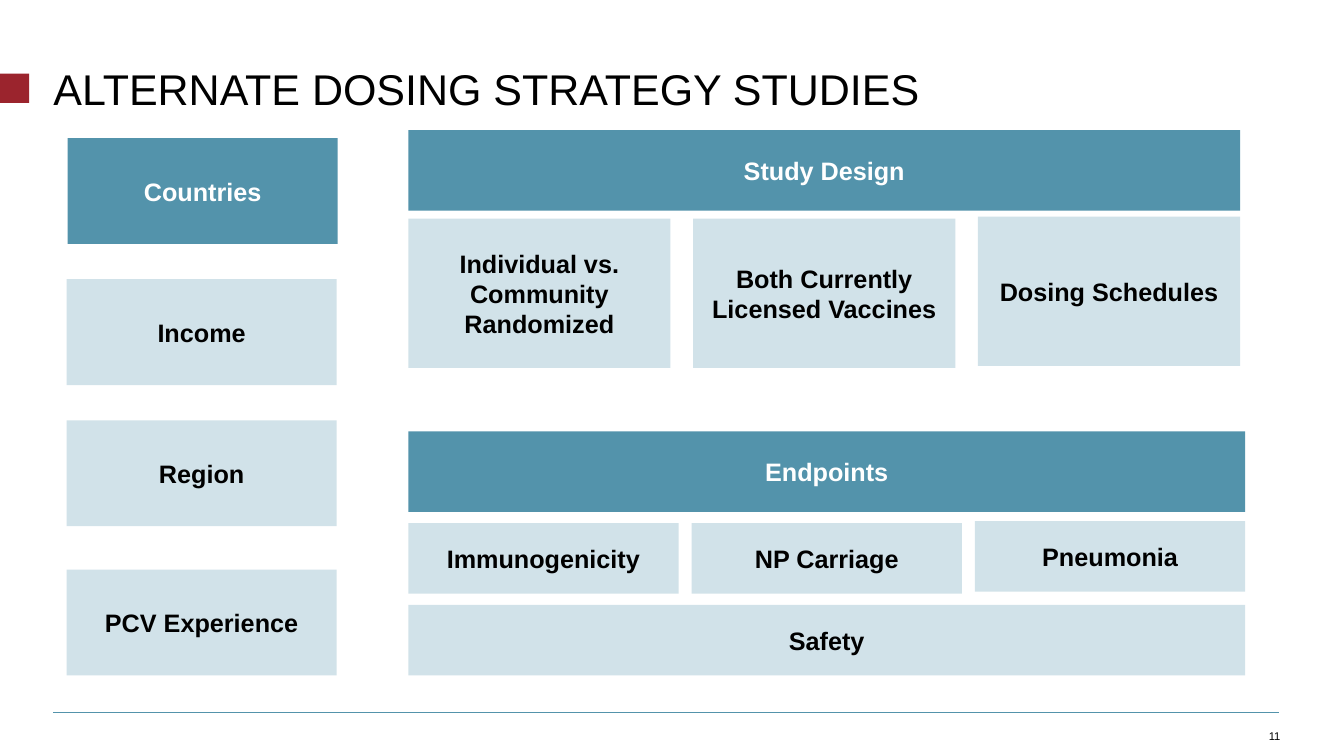
from dataclasses import dataclass

from lxml.etree import SubElement
from pptx import Presentation
from pptx.dml.color import RGBColor
from pptx.enum.shapes import MSO_CONNECTOR, MSO_SHAPE
from pptx.enum.text import MSO_ANCHOR, MSO_AUTO_SIZE, PP_ALIGN
from pptx.oxml.ns import qn
from pptx.util import Inches, Pt


@dataclass(frozen=True)
class Theme:
    """Colours, font and type sizes of the slide."""
    accent: RGBColor = RGBColor(0x9B, 0x24, 0x2D)
    header: RGBColor = RGBColor(0x53, 0x93, 0xAB)
    item: RGBColor = RGBColor(0xD1, 0xE2, 0xE9)
    dark: RGBColor = RGBColor(0, 0, 0)
    light: RGBColor = RGBColor(0xFF, 0xFF, 0xFF)
    font: str = "Arial"
    title: float = 30.7
    body: float = 18
    small: float = 8


THEME = Theme()


def apply(target, formats):
    """Set every attribute named in formats on target."""
    for name, value in formats.items():
        setattr(target, name, value)


def place(shape, x, y, w, h):
    """Move and size a shape in inches."""
    apply(shape, {"left": Inches(x), "top": Inches(y),
                  "width": Inches(w), "height": Inches(h)})


def write(shape, text, size, color, align, anchor, bold=False, inset=None):
    """Put one formatted paragraph in a shape and return it."""
    tf = shape.text_frame
    apply(tf, {"word_wrap": True, "auto_size": MSO_AUTO_SIZE.NONE,
               "vertical_anchor": anchor})
    if inset is not None:
        sides = ("left", "right", "top", "bottom")
        apply(tf, {f"margin_{side}": Inches(inset) for side in sides})
    p = tf.paragraphs[0]
    p.alignment = align
    r = p.add_run()
    r.text = text
    apply(r.font, {"name": THEME.font, "size": Pt(size), "bold": bold})
    r.font.color.rgb = color
    return p


def add_block(s, x, y, w, h, fill):
    """Add a flat rectangle without outline."""
    sp = s.shapes.add_shape(MSO_SHAPE.RECTANGLE, Inches(x), Inches(y),
                            Inches(w), Inches(h))
    sp.shadow.inherit = False
    sp.fill.solid()
    sp.fill.fore_color.rgb = fill
    sp.line.fill.background()
    return sp


def add_label(s, x, y, w, h, text, header=False):
    """Add a header or item block with a centred bold label."""
    fill, color = (THEME.header, THEME.light) if header else (THEME.item, THEME.dark)
    write(add_block(s, x, y, w, h, fill), text, THEME.body, color,
          PP_ALIGN.CENTER, MSO_ANCHOR.MIDDLE, bold=True)


def add_row(s, x, y, w, h, item_w, labels, last_lift=0.02):
    """Spread items evenly over a row, the last one slightly raised."""
    step = (w - item_w) / (len(labels) - 1)
    for i, label in enumerate(labels):
        lift = last_lift if i == len(labels) - 1 else 0
        add_label(s, x + i * step, y - lift, item_w, h, label)


def add_title(s, x, y, w, h, text):
    """Fill the title placeholder and set the red marker at the slide edge."""
    add_block(s, 0, y + 0.02, 0.29, 0.29, THEME.accent)
    place(s.shapes.title, x, y, w, h)
    p = write(s.shapes.title, text, THEME.title, THEME.dark,
              PP_ALIGN.LEFT, MSO_ANCHOR.TOP, inset=0)
    p.line_spacing = Pt(THEME.title)


def add_footer(s, x, y, w, h, number):
    """Draw the footer rule with the page number below its right end."""
    rule = s.shapes.add_connector(MSO_CONNECTOR.STRAIGHT, Inches(x), Inches(y),
                                  Inches(x + w), Inches(y))
    rule.line.color.rgb = THEME.header
    rule.line.width = Pt(0.5)
    SubElement(rule._element.spPr, qn("a:effectLst"))
    tb = s.shapes.add_textbox(Inches(x + w - 0.27), Inches(y + 0.07),
                              Inches(0.28), Inches(h - 0.07))
    write(tb, number, THEME.small, THEME.dark,
          PP_ALIGN.RIGHT, MSO_ANCHOR.BOTTOM, inset=0)


def add_countries(s, x, y, w, h):
    """Stack the country criteria in a column, the last at its foot."""
    item_h, step = 1.05, 1.4
    add_label(s, x + 0.01, y, w, item_h, "Countries", header=True)
    add_label(s, x, y + step, w, item_h, "Income")
    add_label(s, x, y + 2 * step, w, item_h, "Region")
    add_label(s, x, y + h - item_h, w, item_h, "PCV Experience")


def add_study_design(s, x, y, w, h):
    """Place the study design header over its three features."""
    add_label(s, x, y, w, 0.8, "Study Design", header=True)
    add_row(s, x, y + 0.88, w, h - 0.88, 2.6,
            ["Individual vs. Community Randomized",
             "Both Currently Licensed Vaccines", "Dosing Schedules"])


def add_endpoints(s, x, y, w, h):
    """Place the endpoints header, its three outcomes and the safety bar."""
    item_h = 0.7
    add_label(s, x, y, w, 0.8, "Endpoints", header=True)
    add_row(s, x, y + 0.91, w, item_h, 2.68,
            ["Immunogenicity", "NP Carriage", "Pneumonia"])
    add_label(s, x, y + h - item_h, w, item_h, "Safety")


def main():
    """Build and save the slide."""
    prs = Presentation()
    apply(prs, {"slide_width": Inches(13.33), "slide_height": Inches(7.5)})
    s = prs.slides.add_slide(prs.slide_layouts[5])
    add_title(s, 0.53, 0.71, 12.15, 0.56, "ALTERNATE DOSING STRATEGY STUDIES")
    add_footer(s, 0.53, 7.07, 12.16, 0.3, "11")
    add_countries(s, 0.66, 1.37, 2.68, 5.33)
    add_study_design(s, 4.05, 1.29, 8.25, 2.36)
    add_endpoints(s, 4.05, 4.28, 8.3, 2.42)
    prs.save("out.pptx")


if __name__ == "__main__":
    main()
